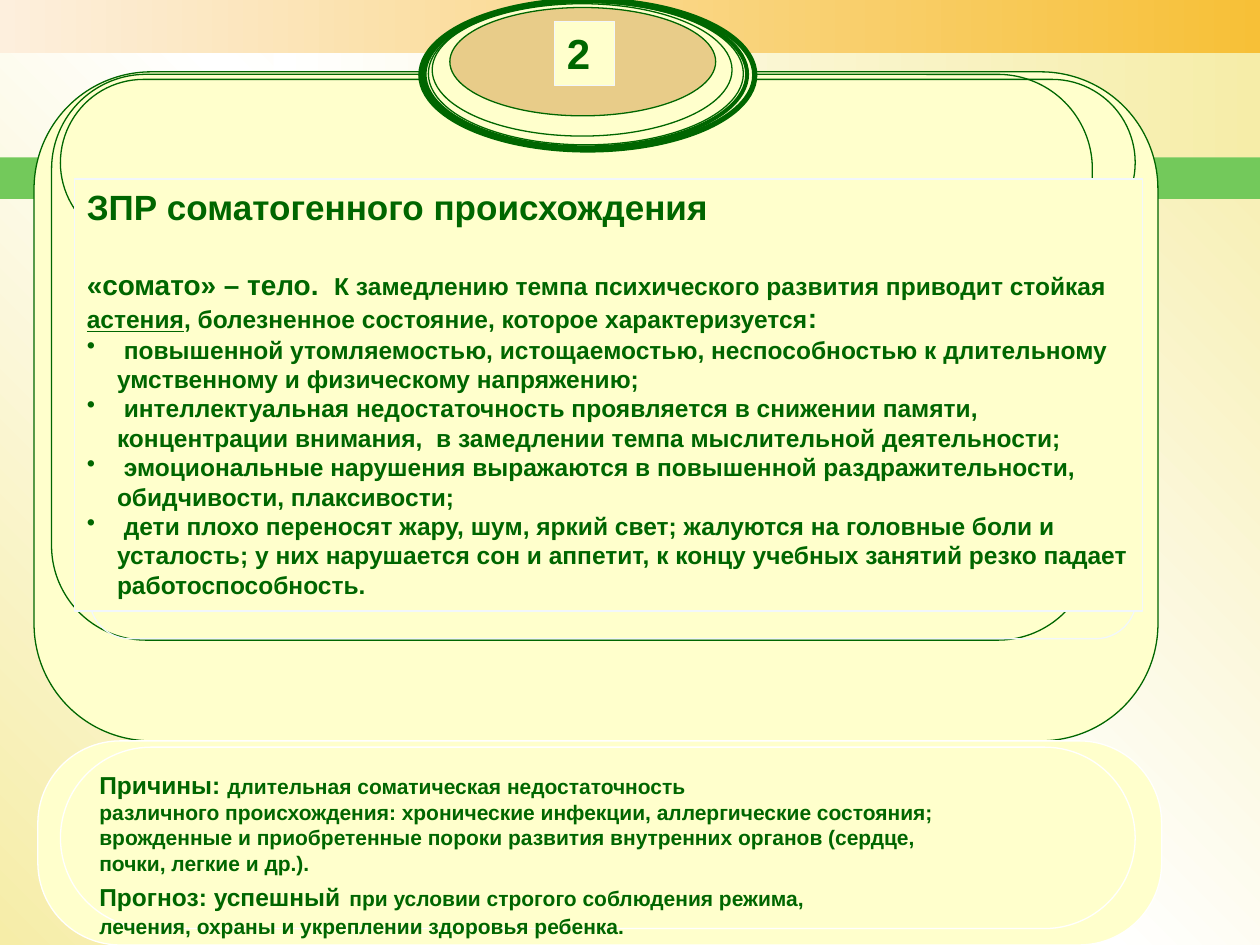
from copy import deepcopy

from pptx import Presentation
from pptx.dml.color import RGBColor
from pptx.enum.shapes import MSO_SHAPE as SHAPE
from pptx.enum.text import MSO_ANCHOR as ANCHOR, MSO_AUTO_SIZE as AUTO, PP_ALIGN as ALIGN
from pptx.oxml.ns import qn
from pptx.oxml.xmlchemy import OxmlElement
from pptx.util import Inches, Pt

GREEN, CREAM, WHITE, PALE, SAND = "006600", "FFFFCC", "FFFFFF", "F2F7FC", "F6EDA8"

# Runs are (text, size) or (text, size, underline)
CAUSES = [
    [("Причины: ", 14), ("длительная соматическая недостаточность", 12)],
    [("различного происхождения: хронические инфекции, аллергические состояния;", 12)],
    [("врожденные и приобретенные пороки развития внутренних органов (сердце,", 12)],
    [("почки, легкие и др.).", 12)],
    [("Прогноз: успешный", 14), (" ", 18), ("при условии строгого соблюдения режима,", 12)],
    [("лечения, охраны и укреплении здоровья ребенка.", 12)],
]
TITLE = [("ЗПР соматогенного происхождения", 20)]
INTRO = [
    ("«сомато» – тело.  ", 16),
    ("К замедлению темпа психического развития приводит стойкая ", 14),
    ("астения", 14, True),
    (", болезненное состояние, которое характеризуется", 14),
    (":", 16),
]
SYMPTOMS = [
    " повышенной утомляемостью, истощаемостью, неспособностью к длительному "
    "умственному и физическому напряжению;",
    " интеллектуальная недостаточность проявляется в снижении памяти, "
    "концентрации внимания,  в замедлении темпа мыслительной деятельности;",
    " эмоциональные нарушения выражаются в повышенной раздражительности, "
    "обидчивости, плаксивости;",
    " дети плохо переносят жару, шум, яркий свет; жалуются на головные боли и "
    "усталость; у них нарушается сон и аппетит, к концу учебных занятий резко "
    "падает работоспособность.",
]


def rgb(color):
    return RGBColor.from_string(color)


def set_gradient(fill, element, colors, angle):
    """Spread the colors evenly; the angle runs counter-clockwise."""
    fill.gradient()
    fill.gradient_angle = angle
    stops = element.find(".//" + qn("a:gsLst"))
    for _ in colors[2:]:
        stops.append(deepcopy(stops[0]))
    for i, (stop, color) in enumerate(zip(fill.gradient_stops, colors)):
        stop.color.rgb = rgb(color)
        stop.position = i / (len(colors) - 1)


def add_shape(slide, kind, box, fill=None, line=None, width=0.75, adj=None, alpha=None):
    s = slide.shapes.add_shape(kind, *map(Inches, box))
    s.shadow.inherit = False
    if adj is not None:
        s.adjustments[0] = adj
    if isinstance(fill, list):
        set_gradient(s.fill, s._element, fill, 0)
    elif fill:
        s.fill.solid()
        s.fill.fore_color.rgb = rgb(fill)
        if alpha:
            a = OxmlElement("a:alpha")
            a.set("val", str(alpha * 1000))
            s._element.spPr.find(".//" + qn("a:srgbClr")).append(a)
    else:
        s.fill.background()
    if line:
        s.line.color.rgb = rgb(line)
        s.line.width = Pt(width)
    else:
        s.line.fill.background()
    return s


def add_bullet(p, indent=0.24):
    pPr = p._p.get_or_add_pPr()
    pPr.set("marL", str(Inches(indent)))
    pPr.set("indent", str(-Inches(indent)))
    bullet = OxmlElement("a:buChar")
    bullet.set("char", "•")
    pPr.append(bullet)


def write(s, paragraphs, **frame):
    """Fill the shape with paragraphs of runs and return the paragraphs."""
    tf = s.text_frame
    for name, value in frame.items():
        setattr(tf, name, value)
    for i, runs in enumerate(paragraphs):
        p = tf.add_paragraph() if i else tf.paragraphs[0]
        p.alignment = ALIGN.LEFT
        for text, size, *underline in runs:
            r = p.add_run()
            r.text = text
            style = {"name": "Arial", "size": Pt(size), "bold": True,
                     "underline": bool(underline)}
            for name, value in style.items():
                setattr(r.font, name, value)
            r.font.color.rgb = rgb(GREEN)
    return tf.paragraphs


def add_backdrop(slide):
    bg = slide.background
    set_gradient(bg.fill, slide._element, [SAND, WHITE, SAND], 45)
    add_shape(slide, SHAPE.RECTANGLE, (0, 0, 10, 0.42), ["FDEFDD", "F7C037"])
    add_shape(slide, SHAPE.RECTANGLE, (2.17, 0.42, 7.83, 0.83), [WHITE, SAND])
    add_shape(slide, SHAPE.RECTANGLE, (0, 1.25, 10, 0.33), "73C95B")


def add_panels(slide):
    for box, adj, fill, line in [
        ((0.27, 0.57, 8.92, 5.31), 0.175, CREAM, GREEN),
        ((0.41, 0.59, 8.26, 4.49), 0.167, CREAM, GREEN),
        ((0.71, 4.42, 8.31, 0.65), 0.5, None, PALE),
        ((0.48, 0.63, 8.53, 1.32), 0.5, None, GREEN),
        ((0.3, 5.88, 8.92, 1.62), 0.404, CREAM, WHITE),
    ]:
        add_shape(slide, SHAPE.ROUNDED_RECTANGLE, box, fill, line, adj=adj)


def add_causes(slide):
    s = add_shape(slide, SHAPE.ROUNDED_RECTANGLE, (0.48, 5.93, 8.53, 1.44),
                  CREAM, WHITE, adj=0.5)
    write(s, CAUSES, word_wrap=False, vertical_anchor=ANCHOR.MIDDLE,
          margin_top=Inches(0.31))


def add_badge(slide):
    for box, fill, width, alpha in [
        ((3.34, 0, 2.65, 1.19), CREAM, 3, None),
        ((3.37, 0.01, 2.56, 1.16), CREAM, 2.25, None),
        ((3.4, 0.02, 2.5, 1.13), None, 0.75, None),
        ((3.43, 0.03, 2.38, 1.05), CREAM, 0.75, 48),
        ((3.57, 0.06, 2.11, 0.86), "C4791E", 0.75, 38),
    ]:
        add_shape(slide, SHAPE.OVAL, box, fill, GREEN, width, alpha=alpha)
    s = add_shape(slide, SHAPE.RECTANGLE, (4.4, 0.17, 0.48, 0.51), CREAM, PALE)
    write(s, [[("2", 24)]], word_wrap=False, vertical_anchor=ANCHOR.TOP,
          auto_size=AUTO.SHAPE_TO_FIT_TEXT)


def add_description(slide):
    s = add_shape(slide, SHAPE.RECTANGLE, (0.59, 1.42, 8.48, 3.43), CREAM, PALE)
    symptoms = [[(text, 14)] for text in SYMPTOMS]
    paragraphs = write(s, [TITLE, INTRO] + symptoms, word_wrap=True,
                       vertical_anchor=ANCHOR.TOP, auto_size=AUTO.SHAPE_TO_FIT_TEXT)
    paragraphs[1].space_before = Pt(23)
    for p in paragraphs[2:]:
        add_bullet(p)


def main():
    prs = Presentation()
    prs.slide_width, prs.slide_height = Inches(10), Inches(7.5)
    slide = prs.slides.add_slide(prs.slide_layouts[6])
    # Background and bands
    add_backdrop(slide)
    # Framed panels with causes and prognosis
    add_panels(slide)
    add_causes(slide)
    # Numbered badge and main text
    add_badge(slide)
    add_description(slide)
    prs.save("out.pptx")


if __name__ == "__main__":
    main()
